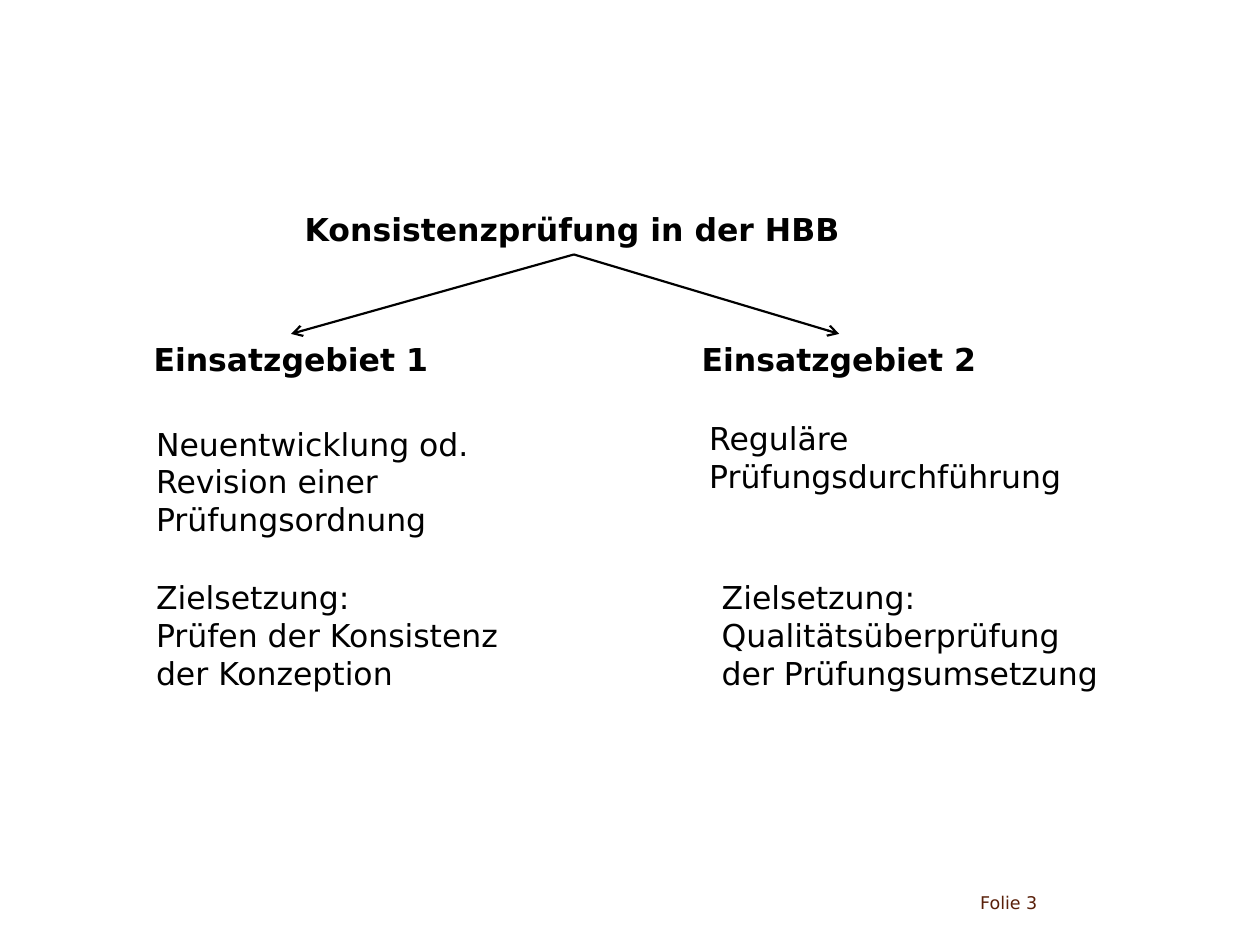
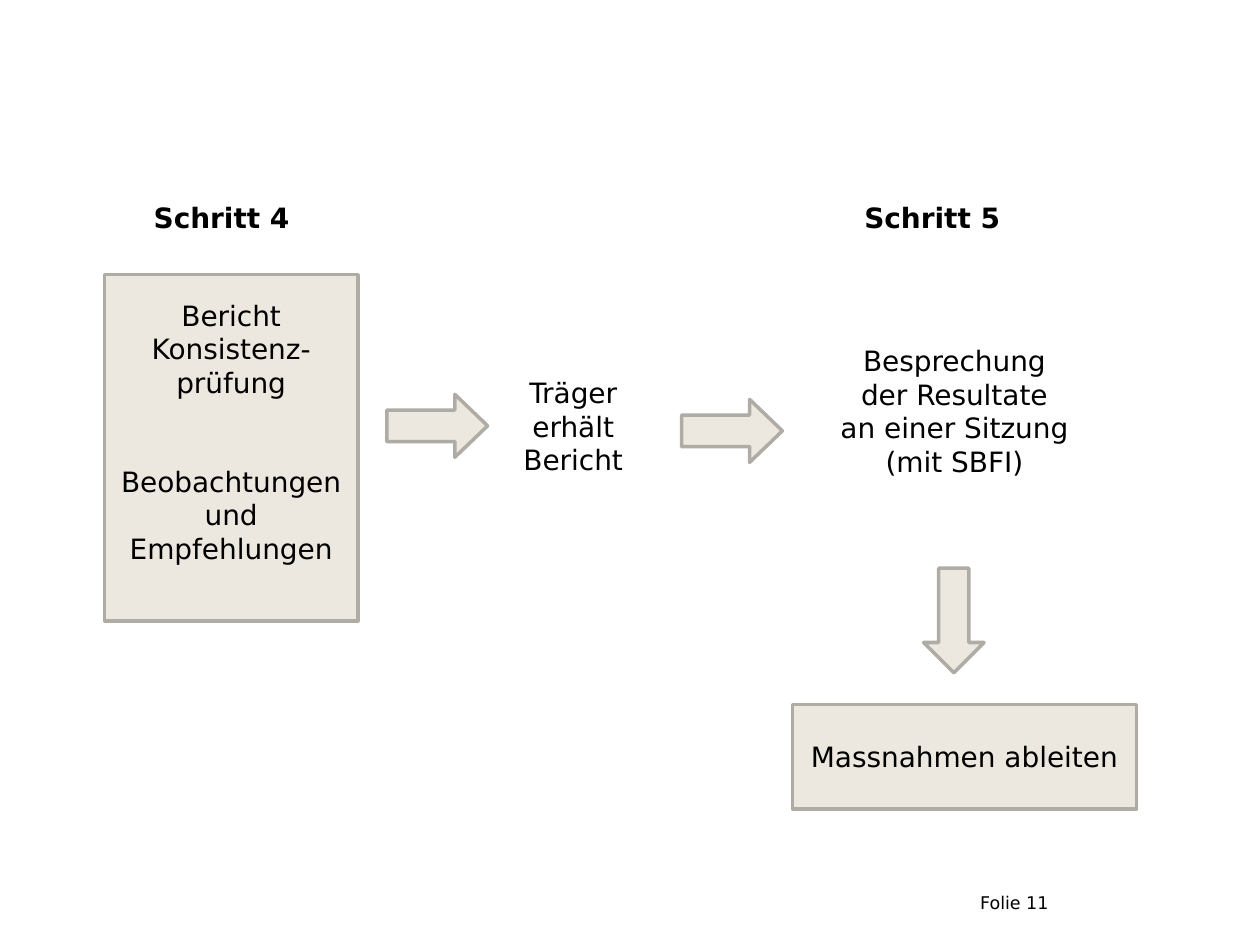
from dataclasses import dataclass

from lxml.etree import SubElement
from pptx import Presentation
from pptx.dml.color import RGBColor
from pptx.enum.shapes import MSO_CONNECTOR, MSO_SHAPE
from pptx.enum.text import MSO_ANCHOR, PP_ALIGN
from pptx.oxml.ns import qn
from pptx.shapes.autoshape import Shape
from pptx.slide import Slide
from pptx.util import Inches, Pt


@dataclass(frozen=True)
class Theme:
    font: str = "DejaVu Sans"
    ink: RGBColor = RGBColor(0, 0, 0)
    brown: RGBColor = RGBColor(0x59, 0x20, 0x0A)
    sand: RGBColor = RGBColor(0xED, 0xE8, 0xDF)
    edge: RGBColor = RGBColor(0xAF, 0xAC, 0xA5)
    large: Pt = Pt(18)
    body: Pt = Pt(16)
    small: Pt = Pt(10)
    rule: Pt = Pt(1.25)
    frame: Pt = Pt(2)
    gap: Pt = Pt(37.25)  # two body lines


THEME = Theme()


@dataclass(frozen=True)
class Area:
    left: float
    top: float
    width: float
    height: float

    def lengths(self) -> list[Inches]:
        return [Inches(n) for n in (self.left, self.top, self.width, self.height)]


@dataclass(frozen=True)
class Style:
    size: Pt = THEME.body
    color: RGBColor = THEME.ink
    bold: bool = False
    wrap: bool = True
    inset: bool = True
    center: bool = False
    gap: Pt = Pt(0)
    foot: float = 0.05  # bottom inset in inches


LABEL = Style(THEME.large, bold=True, wrap=False)
NOTE = Style(THEME.large, wrap=False)
HEAD = Style(bold=True, inset=False)
STEP = Style(center=True)
RAISED = Style(center=True, gap=THEME.gap, foot=0.31)


@dataclass(frozen=True)
class Block:
    area: Area
    lines: tuple[str, ...]
    style: Style
    filled: bool = False


@dataclass(frozen=True)
class Arrow:
    kind: MSO_SHAPE
    area: Area
    head: float


TOPIC = Block(Area(2.32, 1.62, 4.47, 0.4), ("Konsistenzprüfung in der HBB",), LABEL)
FIELDS = [
    Block(Area(left, 2.65, 2.38, 0.4), (f"Einsatzgebiet {num}",), LABEL)
    for num, left in enumerate((1.12, 5.47), 1)
]
NOTES = [
    Block(Area(1.14, 3.32, 2.71, 1.01),
          ("Neuentwicklung od.", "Revision einer", "Prüfungsordnung"), NOTE),
    Block(Area(5.53, 3.28, 3.12, 0.71), ("Reguläre", "Prüfungsdurchführung"), NOTE),
    Block(Area(1.14, 4.54, 2.97, 1.01),
          ("Zielsetzung:", "Prüfen der Konsistenz", "der Konzeption"), NOTE),
    Block(Area(5.63, 4.54, 3.4, 1.01),
          ("Zielsetzung:", "Qualitätsüberprüfung", "der Prüfungsumsetzung"), NOTE),
]
HEADS = [
    Block(Area(left, 1.59, 1.42, 0.58), (f"Schritt {num}",), HEAD)
    for num, left in ((4, 1.22), (5, 6.86))
]
STEPS = [
    Block(Area(0.83, 2.18, 2.01, 2.75),
          ("Bericht Konsistenz-prüfung", "Beobachtungen und Empfehlungen"),
          RAISED, filled=True),
    Block(Area(3.87, 2.63, 1.36, 1.5), ("Träger erhält Bericht",), STEP),
    Block(Area(6.57, 2.43, 2.01, 1.92),
          ("Besprechung der Resultate an einer Sitzung (mit SBFI)",), RAISED),
    Block(Area(6.29, 5.59, 2.73, 0.83), ("Massnahmen ableiten",), STEP, filled=True),
]
ARROWS = [
    Arrow(MSO_SHAPE.RIGHT_ARROW, Area(3.07, 3.13, 0.8, 0.5), 0.52),
    Arrow(MSO_SHAPE.RIGHT_ARROW, Area(5.41, 3.17, 0.8, 0.5), 0.52),
    Arrow(MSO_SHAPE.DOWN_ARROW, Area(7.33, 4.51, 0.48, 0.83), 0.5),
]


def add_solid(slide: Slide, kind: MSO_SHAPE, area: Area) -> Shape:
    """Add a sand-coloured shape with a grey edge."""
    shape = slide.shapes.add_shape(kind, *area.lengths())
    shape.shadow.inherit = False
    shape.fill.solid()
    shape.fill.fore_color.rgb = THEME.sand
    shape.line.color.rgb = THEME.edge
    shape.line.width = THEME.frame
    return shape


def write(shape: Shape, lines: tuple[str, ...], style: Style) -> None:
    frame = shape.text_frame
    frame.word_wrap = style.wrap
    frame.vertical_anchor = MSO_ANCHOR.MIDDLE if style.center else MSO_ANCHOR.TOP
    if style.inset:
        frame.margin_bottom = Inches(style.foot)
    else:
        frame.margin_left = frame.margin_right = 0
        frame.margin_top = frame.margin_bottom = 0
    for num, line in enumerate(lines):
        para = frame.add_paragraph() if num else frame.paragraphs[0]
        para.text = line
        para.alignment = PP_ALIGN.CENTER if style.center else PP_ALIGN.LEFT
        if num and style.gap:
            para.space_before = style.gap
        font = para.font
        font.name, font.size, font.bold = THEME.font, style.size, style.bold
        font.color.rgb = style.color


def add_block(slide: Slide, block: Block) -> Shape:
    if block.filled:
        shape = add_solid(slide, MSO_SHAPE.RECTANGLE, block.area)
    else:
        shape = slide.shapes.add_textbox(*block.area.lengths())
    write(shape, block.lines, block.style)
    return shape


def add_arrow(slide: Slide, arrow: Arrow) -> None:
    shape = add_solid(slide, arrow.kind, arrow.area)
    shape.adjustments[0] = 0.5
    shape.adjustments[1] = arrow.head


def add_link(slide: Slide, start: Shape, end: Shape) -> None:
    """Draw an arrow from the bottom of one box to the top of another."""
    link = slide.shapes.add_connector(MSO_CONNECTOR.STRAIGHT, 0, 0, 0, 0)
    link.begin_connect(start, 2)
    link.end_connect(end, 0)
    link.line.color.rgb = THEME.ink
    link.line.width = THEME.rule
    SubElement(link.line._get_or_add_ln(), qn("a:tailEnd"), type="arrow")
    SubElement(link._element.spPr, qn("a:effectLst"))


def add_page(deck: Presentation, num: int, color: RGBColor) -> Slide:
    """Add a blank slide with its page number at the foot."""
    slide = deck.slides.add_slide(deck.slide_layouts[6])
    style = Style(THEME.small, color, inset=False)
    add_block(slide, Block(Area(7.78, 7.08, 1.8, 0.42), (f"Folie {num}",), style))
    return slide


def draw_fields(deck: Presentation) -> None:
    slide = add_page(deck, 3, THEME.brown)
    topic = add_block(slide, TOPIC)
    for field in FIELDS:
        add_link(slide, topic, add_block(slide, field))
    for note in NOTES:
        add_block(slide, note)


def draw_steps(deck: Presentation) -> None:
    slide = add_page(deck, 11, THEME.ink)
    for block in HEADS + STEPS:
        add_block(slide, block)
    for arrow in ARROWS:
        add_arrow(slide, arrow)


def main() -> None:
    deck = Presentation()
    deck.slide_width, deck.slide_height = Inches(10), Inches(7.5)
    draw_fields(deck)
    draw_steps(deck)
    deck.save("out.pptx")


if __name__ == "__main__":
    main()
